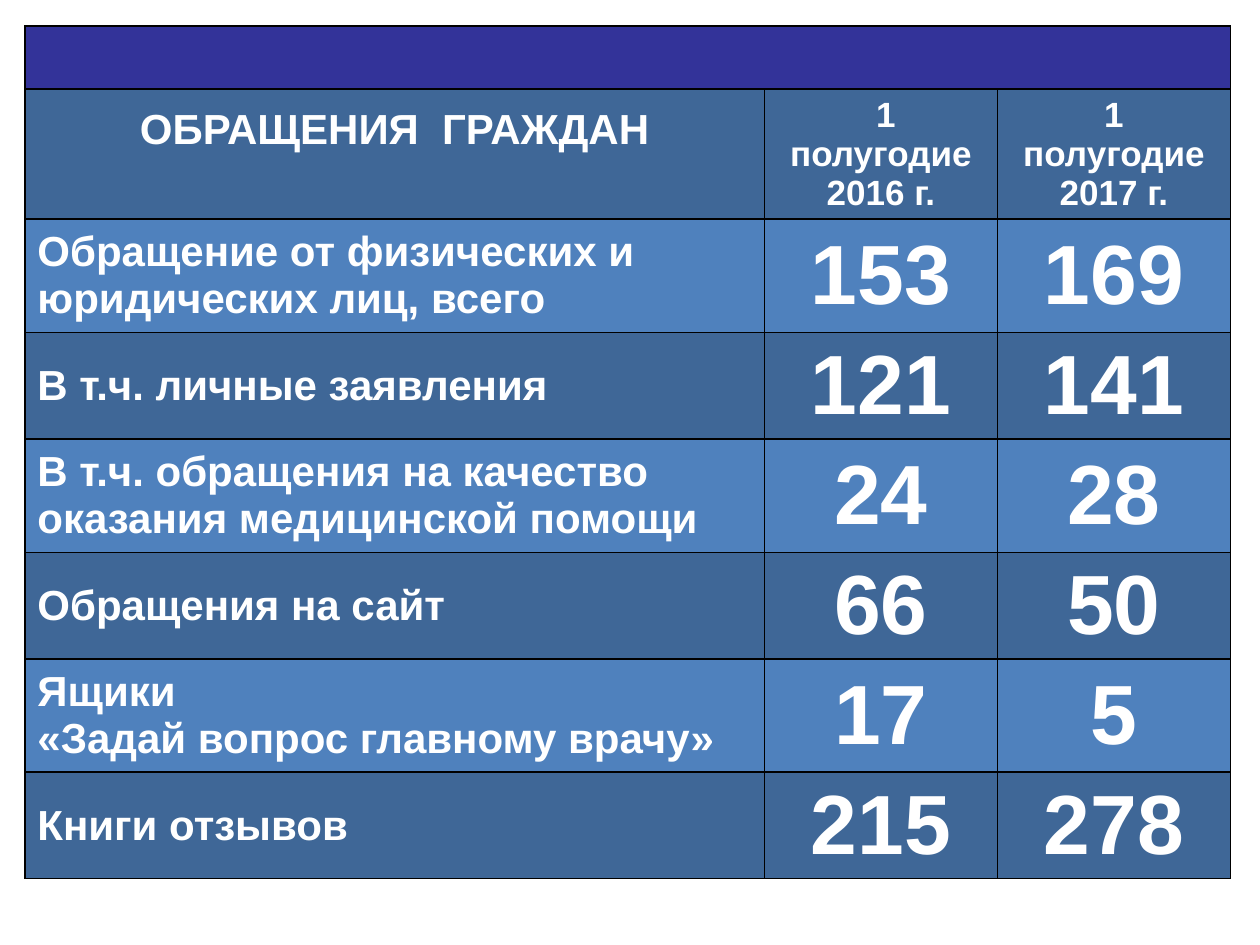
"""Builds a slide with a table of citizens' appeals for two half-years."""
from dataclasses import dataclass

from lxml.etree import SubElement
from pptx import Presentation
from pptx.dml.color import RGBColor
from pptx.enum.text import MSO_ANCHOR as Anchor, PP_ALIGN as Align
from pptx.oxml.ns import qn
from pptx.util import Pt


@dataclass(frozen=True)
class Theme:
    font: str = "Arial"
    text: str = "FFFFFF"
    banner: str = "333399"
    dark: str = "3F6797"
    light: str = "4F81BD"
    border: str = "000000"
    border_width: int = 1
    label_size: int = 24
    period_size: int = 20
    figure_size: int = 48


theme = Theme()


def write(cell, text, size=theme.label_size, align=Align.LEFT):
    cell.text = text
    cell.vertical_anchor = Anchor.MIDDLE
    for paragraph in cell.text_frame.paragraphs:
        paragraph.alignment = align
        font = paragraph.runs[0].font
        font.name, font.size, font.bold = theme.font, Pt(size), True
        font.color.rgb = RGBColor.from_string(theme.text)


def paint(cell, fill):
    properties = cell._tc.get_or_add_tcPr()
    for side in ("lnL", "lnR", "lnT", "lnB"):
        line = SubElement(properties, qn(f"a:{side}"), w=str(Pt(theme.border_width)))
        line_fill = SubElement(line, qn("a:solidFill"))
        SubElement(line_fill, qn("a:srgbClr"), val=theme.border)
    cell.fill.solid()
    cell.fill.fore_color.rgb = RGBColor.from_string(fill)


heading = "ОБРАЩЕНИЯ  ГРАЖДАН"
periods = (" 1 полугодие 2016 г.", "1 полугодие 2017 г.")
appeals = [
    ("Обращение от физических и юридических лиц, всего", 153, 169),
    ("В т.ч. личные заявления", 121, 141),
    ("В т.ч. обращения на качество оказания медицинской помощи", 24, 28),
    ("Обращения на сайт", 66, 50),
    ("Ящики\n«Задай вопрос главному врачу»", 17, 5),
    ("Книги отзывов", 215, 278),
]
column_widths = (422.6, 133.2, 133.2)
row_heights = [36, 73.5] + [64.8, 60.5] * 3

deck = Presentation()
deck.slide_width, deck.slide_height = Pt(720), Pt(540)
slide = deck.slides.add_slide(deck.slide_layouts[6])
table = slide.shapes.add_table(
    len(row_heights), len(column_widths),
    Pt(14.2), Pt(15), Pt(sum(column_widths)), Pt(sum(row_heights)),
).table
for column, width in zip(table.columns, column_widths):
    column.width = Pt(width)
for row, height in zip(table.rows, row_heights):
    row.height = Pt(height)

row_fills = [theme.banner, theme.dark] + [theme.light, theme.dark] * 3
for row, fill in zip(table.rows, row_fills):
    for cell in row.cells:
        paint(cell, fill)
table.cell(0, 0).merge(table.cell(0, 2))

heading_cell = table.cell(1, 0)
write(heading_cell, heading, align=Align.CENTER)
heading_cell.margin_bottom = Pt(31)
for column_index, period in enumerate(periods, 1):
    write(table.cell(1, column_index), period, size=theme.period_size, align=Align.CENTER)

for row_index, (label, *figures) in enumerate(appeals, 2):
    write(table.cell(row_index, 0), label)
    for column_index, figure in enumerate(figures, 1):
        write(table.cell(row_index, column_index), str(figure),
              size=theme.figure_size, align=Align.CENTER)

deck.save("out.pptx")
